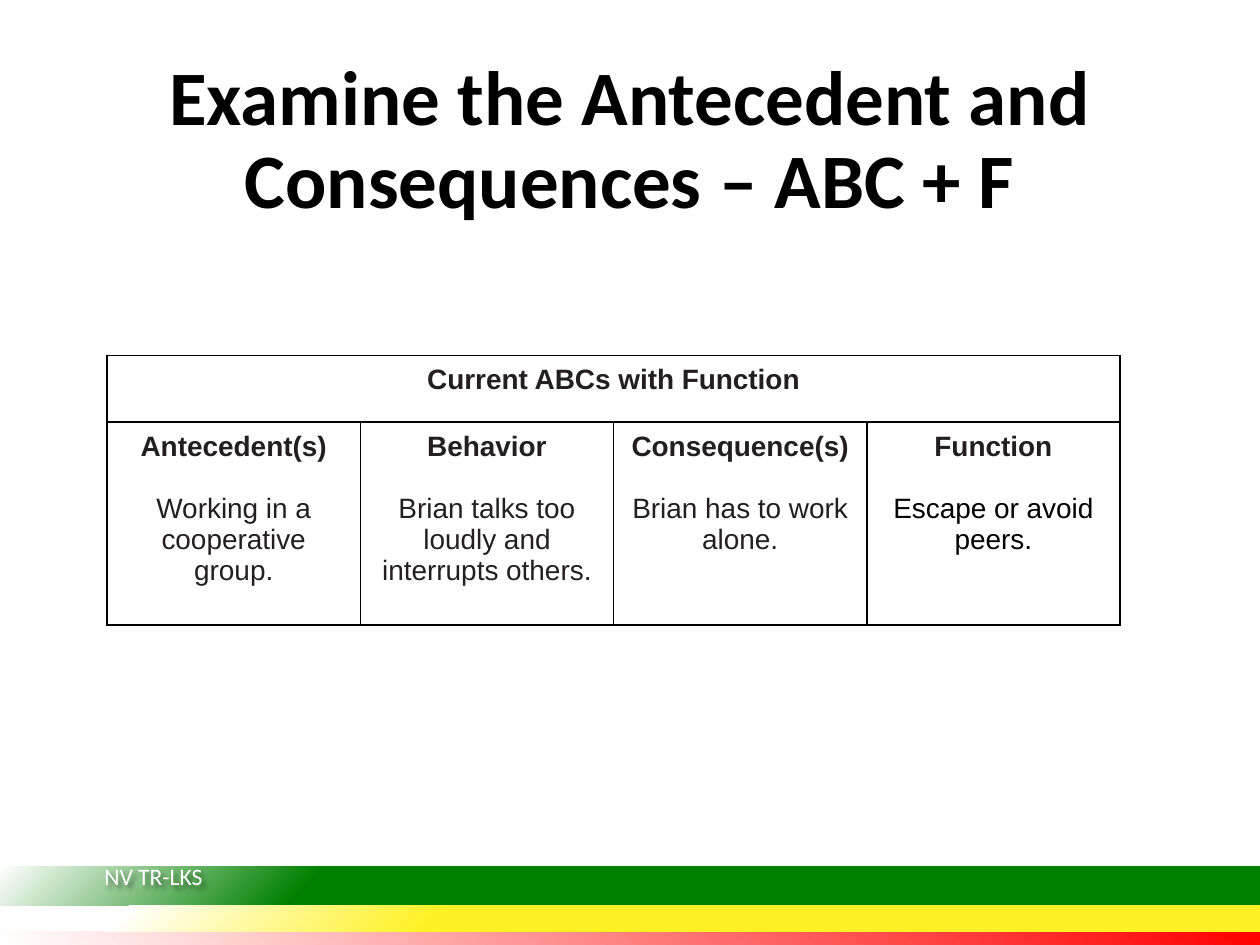
from lxml import etree
from pptx import Presentation, util as u
from pptx.dml.color import RGBColor
from pptx.enum import shapes, text
from pptx.oxml.ns import qn

# Content
TITLE = "Examine the Antecedent and Consequences – ABC + F"
HEAD = "Current ABCs with Function"
COLS = [
    ("Antecedent(s)", "Working in a cooperative\vgroup.", "231F20"),
    ("Behavior", "Brian talks too loudly and interrupts others.", "231F20"),
    ("Consequence(s)", "Brian has to work alone.", "231F20"),
    ("Function", "Escape or avoid peers.", "000000"),
]
FOOT = "NV TR-LKS"

# Bands: top, height, colour stops, focus (left, top, right, bottom)
BANDS = [
    (7.39, 0.12, [(0, "FF0000"), (100, "FFFFFF")], (100, 0, 0, 100)),
    (6.88, 0.31, [(0, "008000"), (75, "008000"), (100, "FFFFFF")],
     (100, 100, 0, 0)),
    (7.19, 0.2, [(0, "FFF123"), (65, "FFF123"), (90, "FFFFFF"),
                 (100, "FFFFFF")], (100, 100, 0, 0)),
]
WIDE, HIGH = 10, 7.5
LEFT, TOP, COL, ROWS = 0.85, 2.82, 2.01, (0.53, 1.61)


def rgb(code):
    return RGBColor.from_string(code)


def box(*nums):
    return [u.Inches(n) for n in nums]


def node(up, tag, **attrs):
    return etree.SubElement(up, qn(tag), {k: str(v) for k, v in attrs.items()})


def write(par, words, size=16, font="Arial", color="231F20", bold=False,
          align=text.PP_ALIGN.CENTER, before=0):
    par.alignment = align
    par.space_before = u.Pt(before)
    for i, part in enumerate(words.split("\v")):
        if i:
            par.add_line_break()
        run = par.add_run()
        run.text = part
        run.font.size, run.font.name, run.font.bold = u.Pt(size), font, bold
        run.font.color.rgb = rgb(color)


def blend(shape, stops, focus):
    """Fill a shape with a circular gradient."""
    shape.fill.background()
    old = shape.element.spPr.find(qn("a:noFill"))
    grad = etree.Element(qn("a:gradFill"), rotWithShape="1")
    group = node(grad, "a:gsLst")
    for pos, color in stops:
        node(node(group, "a:gs", pos=pos * 1000), "a:srgbClr", val=color)
    way = node(grad, "a:path", path="circle")
    node(way, "a:fillToRect",
         **{side: f * 1000 for side, f in zip("ltrb", focus)})
    old.getparent().replace(old, grad)


def shade(shape):
    """Give the letters of an unfilled box a soft shadow."""
    effect = node(shape.element.spPr, "a:effectLst")
    drop = node(effect, "a:outerShdw", blurRad=38100, dist=38100, dir=2700000)
    node(node(drop, "a:srgbClr", val="000000"), "a:alpha", val=43000)


def frame(cell):
    """Unfilled cell with thin black borders."""
    cell.margin_left = cell.margin_right = u.Inches(0.07)
    cell.margin_top = cell.margin_bottom = u.Inches(0.07)
    props = cell._tc.get_or_add_tcPr()
    for side in ("a:lnL", "a:lnR", "a:lnT", "a:lnB"):
        line = node(props, side, w=u.Pt(1))
        node(node(line, "a:solidFill"), "a:srgbClr", val="000000")
    cell.fill.background()


def main():
    deck = Presentation()
    deck.slide_width, deck.slide_height = box(WIDE, HIGH)
    slide = deck.slides.add_slide(deck.slide_layouts[5])

    # Footer bands and label
    for top, high, stops, focus in BANDS:
        band = slide.shapes.add_shape(shapes.MSO_SHAPE.RECTANGLE,
                                      *box(0, top, WIDE, high))
        band.shadow.inherit = False
        band.line.fill.background()
        blend(band, stops, focus)
    label = slide.shapes.add_textbox(*box(0.73, 6.79, 1.92, 0.33))
    label.text_frame.word_wrap = True
    shade(label)
    write(label.text_frame.paragraphs[0], FOOT, size=13.5, font="Calibri",
          color="FFFFFF", align=text.PP_ALIGN.LEFT)

    # Title
    title = slide.shapes.title
    title.left, title.top, title.width, title.height = box(
        0.69, 0.4, 8.62, 1.45)
    title.text_frame.vertical_anchor = text.MSO_ANCHOR.MIDDLE
    par = title.text_frame.paragraphs[0]
    par.line_spacing = 0.9
    write(par, TITLE, size=44, font="Calibri", color="000000", bold=True)

    # Table
    table = slide.shapes.add_table(
        len(ROWS), len(COLS),
        *box(LEFT, TOP, COL * len(COLS), sum(ROWS))).table
    table.first_row = table.horz_banding = False
    for row, high in zip(table.rows, ROWS):
        row.height = u.Inches(high)
    for col in table.columns:
        col.width = u.Inches(COL)
    for cell in table.iter_cells():
        frame(cell)
    top = table.cell(0, 0)
    top.merge(table.cell(0, len(COLS) - 1))
    write(top.text_frame.paragraphs[0], HEAD, bold=True)
    for i, (name, words, color) in enumerate(COLS):
        body = table.cell(1, i).text_frame
        write(body.paragraphs[0], name, bold=True)
        write(body.add_paragraph(), words, color=color, before=18)

    deck.save("out.pptx")


if __name__ == "__main__":
    main()
